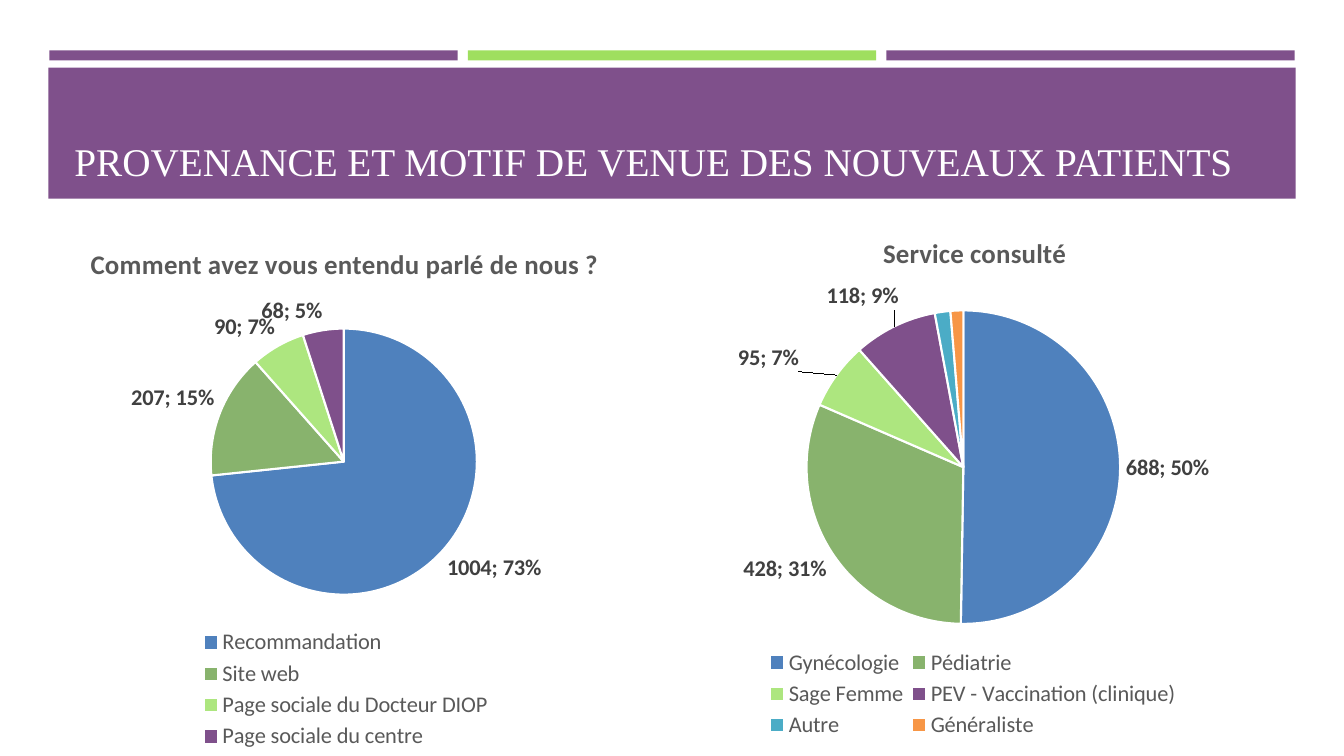
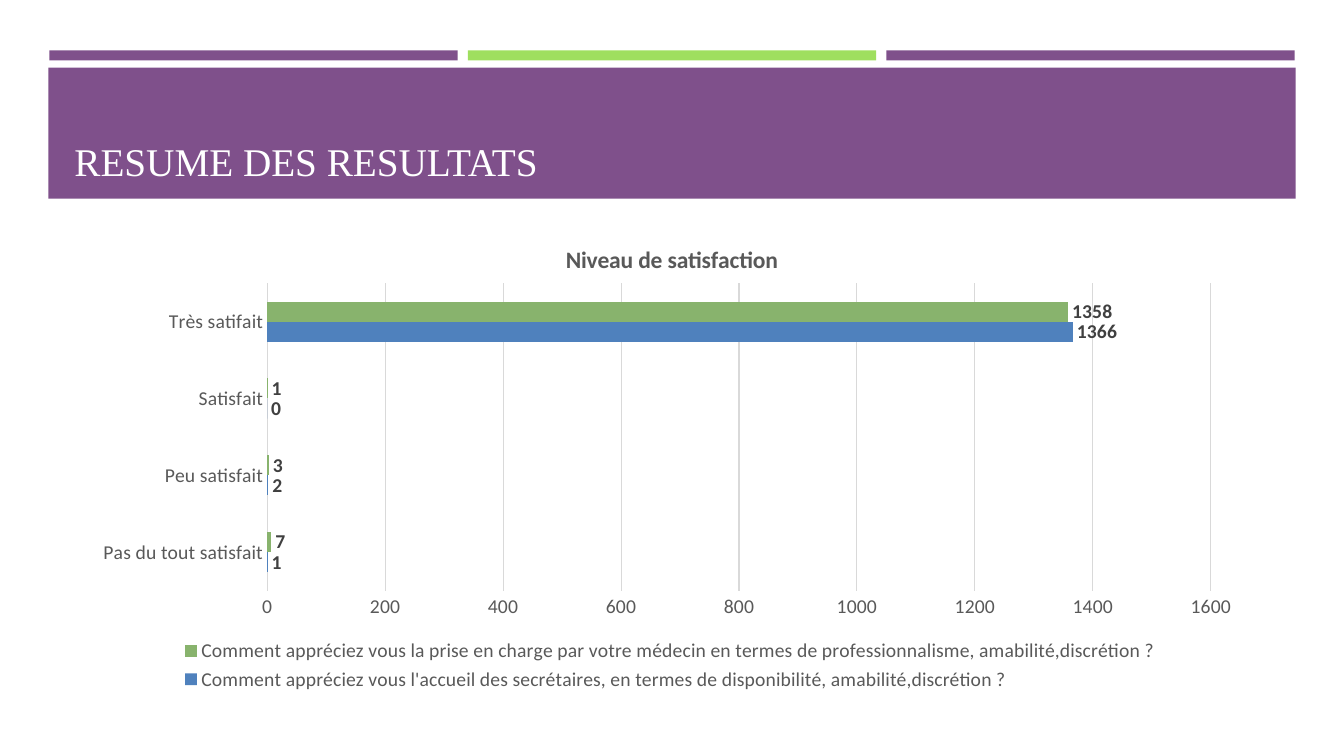
import copy

import lxml.etree
import pptx
import pptx.chart.data
import pptx.dml.color
import pptx.enum.chart
import pptx.enum.shapes
import pptx.enum.text
import pptx.oxml
import pptx.oxml.ns
import pptx.util

Inches = pptx.util.Inches
Pt = pptx.util.Pt
qn = pptx.oxml.ns.qn

PURPLE, LIME, WHITE = "7F508B", "9FDF5F", "FFFFFF"
BLUE, GREEN, LIGHT_GREEN = "4F81BD", "88B36D", "ADE67F"
TEAL, ORANGE = "4BACC6", "F79646"
TEXT_GREY, LABEL_GREY, LINE_GREY = "595959", "404040", "D9D9D9"
SLICE_COLORS = [BLUE, GREEN, LIGHT_GREEN, PURPLE, TEAL, ORANGE]


def color(hex_string):
    return pptx.dml.color.RGBColor.from_string(hex_string)


def set_values(target, values):
    for name, value in values.items():
        setattr(target, name, value)


def set_font(font, size, hex_string, bold=False, name="Calibri"):
    set_values(font, {"size": Pt(size), "bold": bold, "name": name})
    font.color.rgb = color(hex_string)


def set_fill(target_format, hex_string):
    target_format.fill.solid()
    target_format.fill.fore_color.rgb = color(hex_string)


def set_line(line, hex_string, width):
    line.color.rgb = color(hex_string)
    line.width = Pt(width)


def add_element(parent, tag, value=None, index=None):
    """Insert a chart element at index, or at the end."""
    element = lxml.etree.Element(qn(tag))
    if value is not None:
        element.set("val", str(value))
    parent.insert(len(parent) if index is None else index, element)
    return element


def add_layout(parent, index, values):
    """Give a chart part a manual layout from (tag, value) pairs."""
    for old_layout in parent.findall(qn("c:layout")):
        parent.remove(old_layout)
    layout = add_element(parent, "c:layout", index=index)
    manual_layout = add_element(layout, "c:manualLayout")
    for tag, value in values:
        add_element(manual_layout, tag, value)


def place(parent, index, box, frame, inner=False):
    """Place a chart part by slide inches: left, top and maybe width, height."""
    left, top, width, height = frame
    values = [("c:layoutTarget", "inner")] if inner else []
    values += [("c:xMode", "edge"), ("c:yMode", "edge")]
    shares = [(box[0] - left) / width, (box[1] - top) / height]
    if len(box) == 4:
        shares += [box[2] / width, box[3] / height]
    values += zip(["c:x", "c:y", "c:w", "c:h"], shares)
    add_layout(parent, index, values)


def hide_label(data_labels, point_index, position):
    label = add_element(data_labels, "c:dLbl", index=position)
    add_element(label, "c:idx", point_index)
    add_element(label, "c:delete", 1)


def move_label(data_labels, point_index, position, offset):
    """Shift one label by fractions of the chart size."""
    label = add_element(data_labels, "c:dLbl", index=position)
    add_element(label, "c:idx", point_index)
    add_layout(label, 1, zip(["c:x", "c:y"], offset))
    label.append(copy.deepcopy(data_labels.find(qn("c:txPr"))))
    add_element(label, "c:dLblPos", "outEnd")
    shown = {"LegendKey": 0, "Val": 1, "CatName": 0, "SerName": 0,
             "Percent": 1, "BubbleSize": 0}
    for name, value in shown.items():
        add_element(label, "c:show" + name, value)


class Deck:
    def __init__(self):
        self.presentation = pptx.Presentation()
        set_values(self.presentation, {"slide_width": Inches(13.33),
                                       "slide_height": Inches(7.5)})
        self.slide = None

    def add_slide(self, title):
        blank_layout = self.presentation.slide_layouts[6]
        self.slide = self.presentation.slides.add_slide(blank_layout)
        for column, hex_string in enumerate([PURPLE, LIME, PURPLE]):
            self.add_band(0.49 + column * 4.15, 0.5, 4.05, 0.1, hex_string)
        self.add_band(0.48, 0.67, 12.37, 1.3, PURPLE)
        self.add_title(title)

    def add_band(self, left, top, width, height, hex_string):
        shape = self.slide.shapes.add_shape(
            pptx.enum.shapes.MSO_SHAPE.RECTANGLE,
            Inches(left), Inches(top), Inches(width), Inches(height))
        shape.shadow.inherit = False
        set_fill(shape, hex_string)
        shape.line.fill.background()

    def add_title(self, text):
        shape = self.slide.shapes.add_textbox(
            Inches(0.64), Inches(0.77), Inches(12.06), Inches(1.11))
        set_values(shape.text_frame, {
            "word_wrap": True,
            "vertical_anchor": pptx.enum.text.MSO_ANCHOR.BOTTOM})
        run = shape.text_frame.paragraphs[0].add_run()
        run.text = text
        set_font(run.font, 28, WHITE, name="Times New Roman")

    def add_chart(self, kind, frame, title, categories, series, size, boxes):
        """Add a chart with title, legend and plot placed by boxes."""
        chart_data = pptx.chart.data.CategoryChartData()
        chart_data.categories = categories
        for name, values in series:
            chart_data.add_series(name, values)
        chart = self.slide.shapes.add_chart(
            kind, *[Inches(length) for length in frame], chart_data).chart
        set_font(chart.font, size, TEXT_GREY)
        set_values(chart, {"has_title": True, "has_legend": True})
        run = chart.chart_title.text_frame.paragraphs[0].add_run()
        run.text = title
        set_font(run.font, size * 1.2, TEXT_GREY, bold=True)
        set_values(chart.legend, {
            "position": pptx.enum.chart.XL_LEGEND_POSITION.BOTTOM,
            "include_in_layout": False})
        set_font(chart.legend.font, size, TEXT_GREY)
        plot = chart.plots[0]
        plot.vary_by_categories = kind == pptx.enum.chart.XL_CHART_TYPE.PIE
        for one_series in plot.series:
            labels = one_series.data_labels
            set_values(labels, {
                "show_value": True,
                "position": pptx.enum.chart.XL_LABEL_POSITION.OUTSIDE_END})
            set_font(labels.font, size, LABEL_GREY, bold=True)
        chart_element = chart.element.find(qn("c:chart"))
        place(chart_element.find(qn("c:title")), 1, boxes["title"], frame)
        place(chart_element.find(qn("c:legend")), 1, boxes["legend"], frame)
        place(chart_element.find(qn("c:plotArea")), 0, boxes["plot"], frame,
              inner=True)
        return chart

    def add_pie(self, frame, title, values, boxes, moved=None, hidden=()):
        chart = self.add_chart(pptx.enum.chart.XL_CHART_TYPE.PIE, frame, title,
                               list(values), [(title, list(values.values()))],
                               16, boxes)
        series = chart.plots[0].series[0]
        series.data_labels.show_percentage = True
        for index, hex_string in enumerate(SLICE_COLORS[:len(values)]):
            slice_format = series.points[index].format
            set_fill(slice_format, hex_string)
            set_line(slice_format.line, WHITE, 1.5)
        data_labels = series.data_labels._element
        moved = moved or {}
        for position, index in enumerate(sorted([*moved, *hidden])):
            if index in moved:
                move_label(data_labels, index, position, moved[index])
            else:
                hide_label(data_labels, index, position)

    def add_bars(self, frame, title, categories, series, boxes):
        chart = self.add_chart(pptx.enum.chart.XL_CHART_TYPE.BAR_CLUSTERED,
                               frame, title, categories, series, 14, boxes)
        set_values(chart.plots[0], {"gap_width": 182, "overlap": 0})
        for one_series, hex_string in zip(chart.plots[0].series, [BLUE, GREEN]):
            set_fill(one_series.format, hex_string)
        no_tick = pptx.enum.chart.XL_TICK_MARK.NONE
        for axis in (chart.category_axis, chart.value_axis):
            set_values(axis, {"major_tick_mark": no_tick,
                              "minor_tick_mark": no_tick})
            set_font(axis.tick_labels.font, 14, TEXT_GREY)
        set_line(chart.category_axis.format.line, LINE_GREY, 0.75)
        value_axis = chart.value_axis
        set_values(value_axis, {"minimum_scale": 0, "maximum_scale": 1600,
                                "major_unit": 200, "has_major_gridlines": True})
        value_axis.format.line.fill.background()
        set_line(value_axis.major_gridlines.format.line, LINE_GREY, 0.75)


def main():
    deck = Deck()
    deck.add_slide("PROVENANCE ET MOTIF DE VENUE DES NOUVEAUX PATIENTS")
    deck.add_pie(
        (0.13, 2.14, 6.54, 5.36), "Comment avez vous entendu parlé de nous ?",
        {"Recommandation": 1004, "Site web": 207,
         "Page sociale du Docteur DIOP": 90, "Page sociale du centre": 68},
        {"title": (0.85, 2.38), "legend": (1.83, 6.2, 3.2, 1.28),
         "plot": (2.09, 3.26, 2.64, 2.64)})
    deck.add_pie(
        (6.36, 2.04, 6.54, 5.36), "Service consulté",
        {"Gynécologie": 688, "Pédiatrie": 428, "Sage Femme": 95,
         "PEV - Vaccination (clinique)": 118, "Autre": 22, "Généraliste": 18},
        {"title": (8.71, 2.27), "legend": (7.55, 6.4, 4.2, 0.97),
         "plot": (8, 3.08, 3.11, 3.11)},
        moved={2: (-0.05, 0), 3: (0.01, -0.02)}, hidden=(4, 5))

    deck.add_slide("RESUME DES RESULTATS")
    deck.add_bars(
        (0.8, 2.19, 11.65, 4.71), "Niveau de satisfaction",
        ["Pas du tout satisfait", "Peu satisfait", "Satisfait", "Très satifait"],
        [("Comment appréciez vous l'accueil des secrétaires, en termes de "
          "disponibilité, amabilité,discrétion ?", [1, 2, 0, 1366]),
         ("Comment appréciez vous la prise en charge par votre médecin en "
          "termes de professionnalisme, amabilité,discrétion ?",
          [7, 3, 1, 1358])],
        {"title": (5.57, 2.37), "legend": (1.75, 6.3, 9.8, 0.6),
         "plot": (2.65, 2.81, 9.36, 3.05)})
    deck.presentation.save("out.pptx")


if __name__ == "__main__":
    main()
